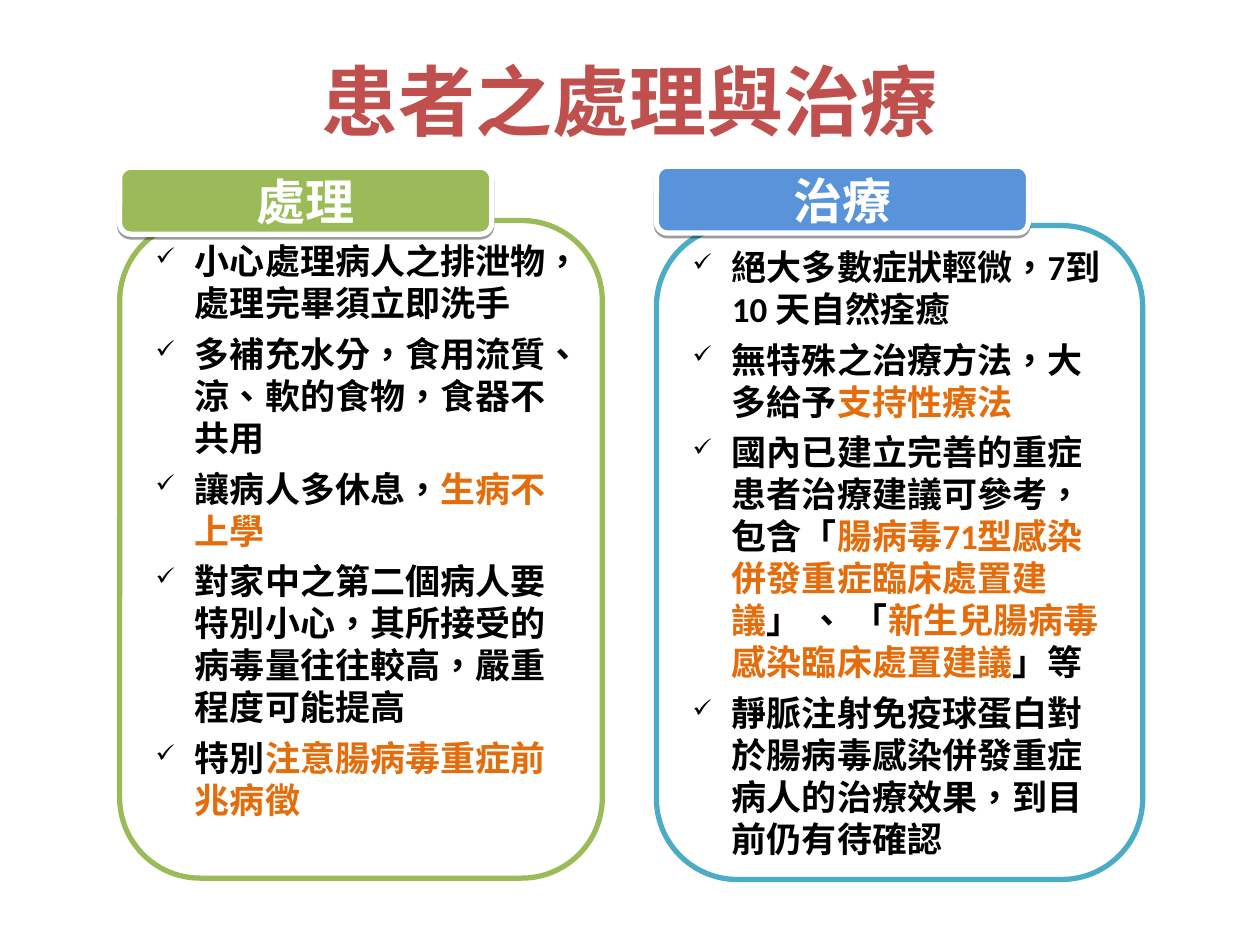
from lxml import etree
from pptx import Presentation
from pptx.dml.color import RGBColor
from pptx.enum import lang, shapes, text
from pptx.oxml import ns
from pptx.util import Pt

RED = RGBColor(0xC0, 0x50, 0x4D)
GREEN = RGBColor(0x9B, 0xBB, 0x59)
TEAL = RGBColor(0x4B, 0xAC, 0xC6)
BLUE = RGBColor(0x59, 0x94, 0xDA)
ORANGE = RGBColor(0xE4, 0x6C, 0x0A)
BLACK = RGBColor(0, 0, 0)
WHITE = RGBColor(0xFF, 0xFF, 0xFF)
HEADING_FONT = "Noto Sans CJK SC"
BODY_FONT = "Calibri"

COLUMNS = [
    {
        "heading": "處理", "heading_fill": GREEN, "heading_top": 95.6,
        "outline": GREEN, "panel": (68.4, 126, 275.8, 375.8), "bottom_inset": 25.6,
        "items": [
            ["小心處理病人之排泄物，處理完畢須立即洗手"],
            ["多補充水分，食用流質、涼、軟的食物，食器不共用"],
            ["讓病人多休息，", "生病不上學"],
            ["對家中之第二個病人要特別小心，其所接受的病毒量往往較高，嚴重程度可能提高"],
            ["特別", "注意腸病毒重症前兆病徵"],
        ],
    },
    {
        "heading": "治療", "heading_fill": BLUE, "heading_top": 95,
        "outline": TEAL, "panel": (375.1, 128.9, 277.9, 373.7), "bottom_inset": 3.6,
        "items": [
            ["絕大多數症狀輕微，7到 10 天自然痊癒"],
            ["無特殊之治療方法，大多給予", "支持性療法"],
            ["國內已建立完善的重症患者治療建議可參考，包含「",
             "腸病毒71型感染併發重症臨床處置建議", "」 、 「",
             "新生兒腸病毒感染臨床處置建議", "」等"],
            ["靜脈注射免疫球蛋白對於腸病毒感染併發重症病人的治療效果，到目前仍有待確認"],
        ],
    },
]


def format_span(span, font_name, size, color):
    span.font.name = font_name
    span.font.size = Pt(size)
    span.font.bold = True
    span.font.color.rgb = color
    span.font.language_id = lang.MSO_LANGUAGE_ID.TRADITIONAL_CHINESE
    if font_name == HEADING_FONT:
        latin = span.font._element.find(ns.qn("a:latin"))
        east_asian = etree.Element(ns.qn("a:ea"), typeface=font_name)
        latin.addnext(east_asian)


def add_round_box(page, bounds, fill, outline):
    box = page.shapes.add_shape(
        shapes.MSO_SHAPE.ROUNDED_RECTANGLE, *[Pt(length) for length in bounds])
    box.shadow.inherit = False
    box.fill.solid()
    box.fill.fore_color.rgb = fill
    box.line.color.rgb = outline
    box.line.width = Pt(3)
    box.text_frame.word_wrap = True
    box.text_frame.vertical_anchor = text.MSO_ANCHOR.MIDDLE
    return box


deck = Presentation()
deck.slide_width, deck.slide_height = Pt(720), Pt(540)
page = deck.slides.add_slide(deck.slide_layouts[5])

title = page.shapes.title
title.left, title.top, title.width, title.height = Pt(36), Pt(12.2), Pt(648), Pt(90)
title.text_frame.text = "患者之處理與治療"
title.text_frame.vertical_anchor = text.MSO_ANCHOR.MIDDLE
title.text_frame.paragraphs[0].alignment = text.PP_ALIGN.CENTER
format_span(title.text_frame.paragraphs[0].runs[0], HEADING_FONT, 44, RED)

for column in COLUMNS:
    panel = add_round_box(page, column["panel"], WHITE, column["outline"])
    frame = panel.text_frame
    frame.margin_bottom = Pt(column["bottom_inset"])
    for index, item in enumerate(column["items"]):
        para = frame.add_paragraph() if index else frame.paragraphs[0]
        para.alignment = text.PP_ALIGN.LEFT
        para.space_before = Pt(5 if index else 0)
        properties = para._p.get_or_add_pPr()
        properties.set("marL", str(Pt(22.5)))
        properties.set("indent", str(-Pt(22.5)))
        etree.SubElement(properties, ns.qn("a:buSzPct"), val="70000")
        etree.SubElement(properties, ns.qn("a:buChar"), char="✓")
        for position, words in enumerate(item):
            span = para.add_run()
            span.text = words
            format_span(span, BODY_FONT, 20, ORANGE if position % 2 else BLACK)

for column in COLUMNS:
    bounds = (column["panel"][0], column["heading_top"], 212.6, 38.2)
    heading = add_round_box(page, bounds, column["heading_fill"], WHITE)
    effects = heading._element.spPr.find(ns.qn("a:effectLst"))
    shadow = etree.SubElement(effects, ns.qn("a:outerShdw"), blurRad="0",
                              dist=str(Pt(1.6)), dir="5400000", rotWithShape="0")
    shade = etree.SubElement(shadow, ns.qn("a:srgbClr"), val=str(BLACK))
    etree.SubElement(shade, ns.qn("a:alpha"), val="38000")
    heading.text_frame.text = column["heading"]
    para = heading.text_frame.paragraphs[0]
    para.alignment = text.PP_ALIGN.CENTER
    format_span(para.runs[0], HEADING_FONT, 28, WHITE)

deck.save("out.pptx")
